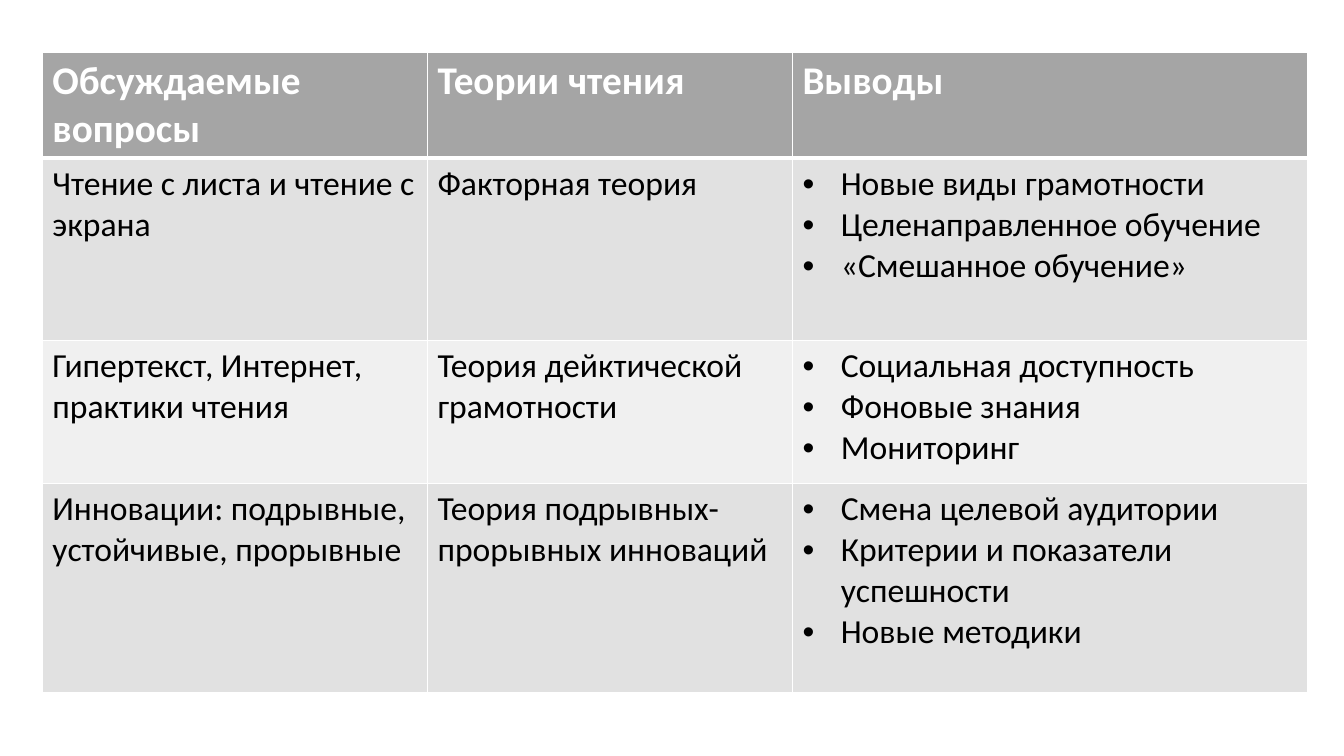
"""Builds a slide with a table of reading theories and conclusions."""
from dataclasses import dataclass
from typing import Any

from lxml.etree import SubElement as Sub
from pptx import Presentation as Deck
from pptx.dml.color import RGBColor as Rgb
from pptx.oxml.ns import qn
from pptx.util import Emu, Pt

SCALE = 9144
WHITE = Rgb(0xFF, 0xFF, 0xFF)
BLACK = Rgb(0x00, 0x00, 0x00)
GRAY = Rgb(0xA5, 0xA5, 0xA5)
SILVER = Rgb(0xE1, 0xE1, 0xE1)
PALE = Rgb(0xF0, 0xF0, 0xF0)

HEAD = {"name": "Calibri", "size": Pt(28), "bold": True}
BODY = {"name": "Calibri", "size": Pt(24), "bold": False}
WIDTHS = (382, 362, 511)
INDENT = 38


@dataclass(frozen=True)
class Row:
    """One table row: height in px, fill and the text of its cells."""
    height: int
    fill: Rgb
    topic: str
    theory: str
    points: tuple[str, ...]
    head: bool = False


ROWS = (
    Row(104, GRAY, "Обсуждаемые вопросы", "Теории чтения", ("Выводы",), True),
    Row(181, SILVER, "Чтение с листа и чтение с экрана", "Факторная теория",
        ("Новые виды грамотности", "Целенаправленное обучение",
         "«Смешанное обучение»")),
    Row(142, PALE, "Гипертекст, Интернет, практики чтения",
        "Теория дейктической грамотности",
        ("Социальная доступность", "Фоновые знания", "Мониторинг")),
    Row(207, SILVER, "Инновации: подрывные, устойчивые, прорывные",
        "Теория подрывных-прорывных инноваций",
        ("Смена целевой аудитории", "Критерии и показатели успешности",
         "Новые методики")),
)


def px(count: int) -> Emu:
    """Turns px into EMU."""
    return Emu(count * SCALE)


def edge(cell: Any, side: str, width: int) -> None:
    """Draws a white border, width in points, on one side of a cell."""
    line = Sub(cell._tc.get_or_add_tcPr(), qn(f"a:ln{side}"), w=str(Pt(width)))
    Sub(Sub(line, qn("a:solidFill")), qn("a:srgbClr"), val=str(WHITE))


def bullet(para: Any) -> None:
    """Gives a paragraph a bullet with a hanging indent."""
    props = para._p.get_or_add_pPr()
    props.set("marL", str(px(INDENT)))
    props.set("indent", str(-px(INDENT)))
    Sub(props, qn("a:buFont"), typeface="Arial")
    Sub(props, qn("a:buChar"), char="•")


def write(cell: Any, lines: tuple[str, ...], row: Row, listed: bool) -> None:
    """Fills one cell with its borders, colour and paragraphs."""
    for side in "LRTB":
        edge(cell, side, 3 if row.head and side == "B" else 1)
    cell.fill.solid()
    cell.fill.fore_color.rgb = row.fill
    cell.text_frame.text = "\n".join(lines)
    for para in cell.text_frame.paragraphs:
        if listed:
            bullet(para)
        font = para.runs[0].font
        for key, value in (HEAD if row.head else BODY).items():
            setattr(font, key, value)
        font.color.rgb = WHITE if row.head else BLACK


def main() -> None:
    """Builds and saves the slide."""
    deck = Deck()
    deck.slide_width, deck.slide_height = px(1333), px(750)
    slide = deck.slides.add_slide(deck.slide_layouts[6])
    high = sum(row.height for row in ROWS)
    table = slide.shapes.add_table(len(ROWS), len(WIDTHS), px(42), px(52),
                                   px(sum(WIDTHS)), px(high)).table
    for col, width in zip(table.columns, WIDTHS):
        col.width = px(width)
    for at, row in enumerate(ROWS):
        table.rows[at].height = px(row.height)
        texts = ((row.topic,), (row.theory,), row.points)
        for col, lines in enumerate(texts):
            write(table.cell(at, col), lines, row, col == 2 and not row.head)
    deck.save("out.pptx")


if __name__ == "__main__":
    main()
